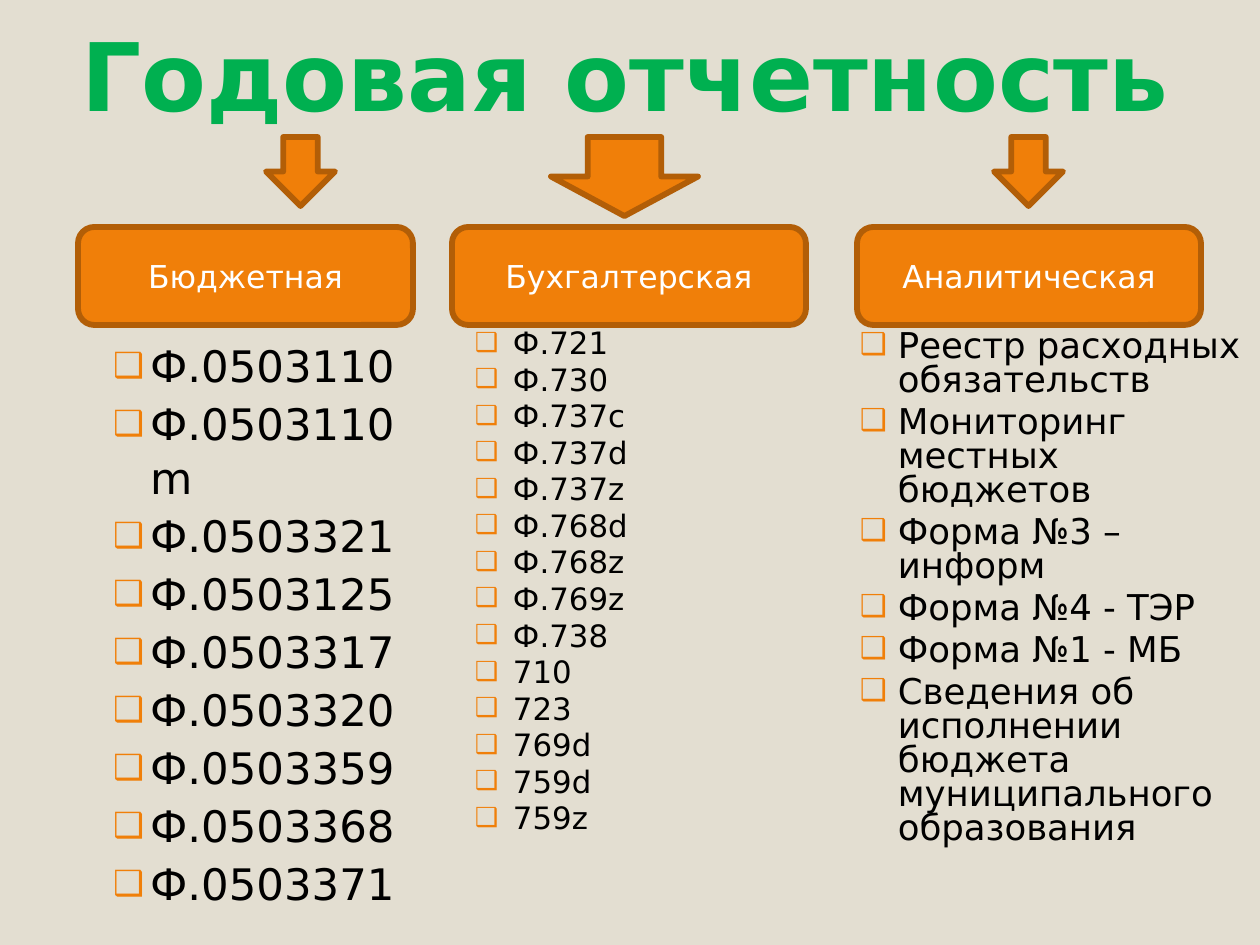
import pptx
import pptx.util
import pptx.dml.color
import pptx.enum.shapes
import pptx.enum.text
import lxml.etree
import pptx.oxml.ns

PX = 914400 / 126
FONT = "DejaVu Sans"
BEIGE = pptx.dml.color.RGBColor(0xE3, 0xDE, 0xD1)
GREEN = pptx.dml.color.RGBColor(0x00, 0xB0, 0x50)
ORANGE = pptx.dml.color.RGBColor(0xF0, 0x7F, 0x09)
BROWN = pptx.dml.color.RGBColor(0xB2, 0x5E, 0x07)
BLACK = pptx.dml.color.RGBColor(0x00, 0x00, 0x00)
WHITE = pptx.dml.color.RGBColor(0xFF, 0xFF, 0xFF)

BUDGET_FORMS = [
    "Ф.0503110", "Ф.0503110m", "Ф.0503321", "Ф.0503125", "Ф.0503317",
    "Ф.0503320", "Ф.0503359", "Ф.0503368", "Ф.0503371",
]
ACCOUNTING_FORMS = [
    "Ф.721", "Ф.730", "Ф.737с", "Ф.737d", "Ф.737z", "Ф.768d", "Ф.768z",
    "Ф.769z", "Ф.738", "710", "723", "769d", "759d", "759z",
]
ANALYTIC_REPORTS = [
    "Реестр расходных обязательств",
    "Мониторинг местных бюджетов",
    "Форма №3 – информ",
    "Форма №4 - ТЭР",
    "Форма №1 - МБ",
    "Сведения об исполнении бюджета муниципального образования",
]

COLUMNS = [
    dict(box=(78, 137, 335), heading="Бюджетная", arrow=(188, 69, 69),
         items=BUDGET_FORMS, list_box=(10, 335, 571), inset=(25, 13),
         size=24.8, hang=37, before=2.5, spacing=1.03, bullet=80),
    dict(box=(452, 137, 354), heading="Бухгалтерская", arrow=(99, 147, 79),
         items=ACCOUNTING_FORMS, list_box=(10, 335, 554), inset=(13, 6),
         size=17.6, hang=38, before=4, spacing=0.8, bullet=85),
    dict(box=(857, 137, 344), heading="Аналитическая", arrow=(137, 69, 69),
         items=ANALYTIC_REPORTS, list_box=(-10, 413, 571), inset=(13, 6),
         size=20.3, hang=38, before=4.5, spacing=0.8, bullet=85),
]


def px(length):
    return pptx.util.Emu(round(length * PX))


def add_run(paragraph, text, size, color, bold=False):
    run = paragraph.add_run()
    run.text = text
    run.font.name = FONT
    run.font.size = pptx.util.Pt(size)
    run.font.bold = bold
    run.font.color.rgb = color


def add_orange_shape(slide, preset, box):
    block = slide.shapes.add_shape(preset, *map(px, box))
    block.shadow.inherit = False
    block.fill.solid()
    block.fill.fore_color.rgb = ORANGE
    block.line.color.rgb = BROWN
    block.line.width = pptx.util.Pt(3.35)
    return block


def add_bullet(paragraph, hang, percent):
    properties = paragraph._p.get_or_add_pPr()
    properties.set("marL", str(px(hang)))
    properties.set("indent", str(-px(hang)))
    qn = pptx.oxml.ns.qn
    color = lxml.etree.SubElement(properties, qn("a:buClr"))
    lxml.etree.SubElement(color, qn("a:srgbClr"), val=str(ORANGE))
    lxml.etree.SubElement(properties, qn("a:buSzPct"), val=str(percent * 1000))
    lxml.etree.SubElement(properties, qn("a:buFont"), typeface=FONT)
    lxml.etree.SubElement(properties, qn("a:buChar"), char="❑")


def add_title(slide, box):
    title = slide.shapes.add_textbox(*map(px, box)).text_frame
    title.word_wrap = True
    title.vertical_anchor = pptx.enum.text.MSO_ANCHOR.BOTTOM
    add_run(title.paragraphs[0], "Годовая отчетность", 54, GREEN, True)


def add_list(slide, box, column):
    forms = slide.shapes.add_textbox(*map(px, box)).text_frame
    forms.word_wrap = True
    left_inset, top_inset = column["inset"]
    forms.margin_left = px(left_inset)
    forms.margin_top = px(top_inset)
    for index, item in enumerate(column["items"]):
        entry = forms.add_paragraph() if index else forms.paragraphs[0]
        entry.line_spacing = column["spacing"]
        entry.space_before = pptx.util.Pt(column["before"])
        add_bullet(entry, column["hang"], column["bullet"])
        add_run(entry, item, column["size"], BLACK)


def add_column(slide, column):
    left, top, width = column["box"]
    arrow_offset, arrow_width, arrow_height = column["arrow"]
    list_offset, list_width, list_height = column["list_box"]
    presets = pptx.enum.shapes.MSO_SHAPE

    add_list(slide, (left + list_offset, top + 188, list_width, list_height), column)
    heading = add_orange_shape(
        slide, presets.ROUNDED_RECTANGLE, (left, top + 90, width, 98)).text_frame
    heading.word_wrap = True
    heading.vertical_anchor = pptx.enum.text.MSO_ANCHOR.MIDDLE
    heading.paragraphs[0].alignment = pptx.enum.text.PP_ALIGN.CENTER
    add_run(heading.paragraphs[0], column["heading"], 18, WHITE)
    add_orange_shape(
        slide, presets.DOWN_ARROW, (left + arrow_offset, top, arrow_width, arrow_height))


def main():
    deck = pptx.Presentation()
    deck.slide_width = px(1260)
    deck.slide_height = px(945)
    slide = deck.slides.add_slide(deck.slide_layouts[6])
    slide.background.fill.solid()
    slide.background.fill.fore_color.rgb = BEIGE
    add_title(slide, (69, 55, 1128, 82))
    for column in COLUMNS:
        add_column(slide, column)
    deck.save("out.pptx")


if __name__ == "__main__":
    main()
